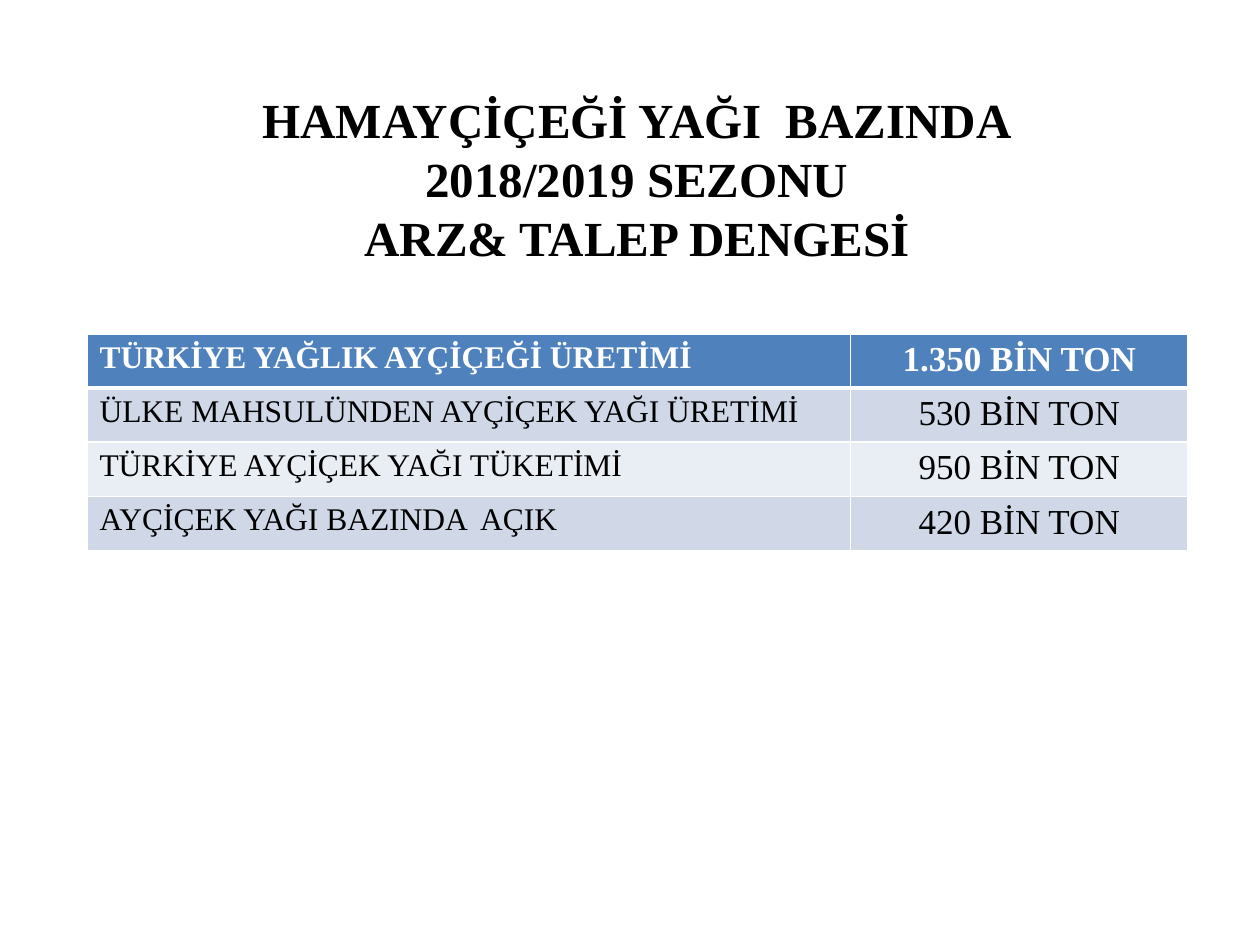
from dataclasses import dataclass

from lxml import etree
from pptx import Presentation
from pptx.dml.color import RGBColor
from pptx.enum import text
from pptx.oxml import ns
from pptx.util import Inches, Pt


@dataclass(frozen=True)
class Theme:
    font: str = "Times New Roman"
    ink: str = "000000"
    paper: str = "FFFFFF"
    header: str = "4F81BD"
    bands: tuple = ("D0D8E8", "E9EDF4")
    title_size: int = 28
    label_size: int = 18
    value_size: int = 20


theme = Theme()
title_lines = ["HAMAYÇİÇEĞİ YAĞI  BAZINDA", "2018/2019 SEZONU", "ARZ& TALEP DENGESİ"]
balance = [
    ("TÜRKİYE YAĞLIK AYÇİÇEĞİ ÜRETİMİ", "1.350 BİN TON"),
    ("ÜLKE MAHSULÜNDEN AYÇİÇEK YAĞI ÜRETİMİ", "530 BİN TON"),
    ("TÜRKİYE AYÇİÇEK YAĞI TÜKETİMİ", "950 BİN TON"),
    ("AYÇİÇEK YAĞI BAZINDA  AÇIK", "420 BİN TON"),
]


def add_span(para, wording, size, color, bold, align):
    para.alignment = align
    span = para.add_run()
    span.text = wording
    span.font.name = theme.font
    span.font.size = Pt(size)
    span.font.bold = bold
    span.font.color.rgb = RGBColor.from_string(color)


def set_borders(cell, bottom_width):
    """Draw thin borders on three sides and one of the given width below."""
    properties = cell._tc.get_or_add_tcPr()
    widths = {"lnL": 1, "lnR": 1, "lnT": 1, "lnB": bottom_width}
    for position, (side, width) in enumerate(widths.items()):
        line = etree.Element(ns.qn(f"a:{side}"), w=str(Pt(width)))
        fill = etree.SubElement(line, ns.qn("a:solidFill"))
        etree.SubElement(fill, ns.qn("a:srgbClr"), val=theme.paper)
        properties.insert(position, line)


deck = Presentation()
deck.slide_width, deck.slide_height = Inches(10), Inches(7.5)
page = deck.slides.add_slide(deck.slide_layouts[5])

title = page.shapes.title
title.left, title.top = Inches(0.68), Inches(0.66)
title.width, title.height = Inches(8.75), Inches(1.51)
frame = title.text_frame
frame.word_wrap = True
frame.auto_size = text.MSO_AUTO_SIZE.NONE
frame.vertical_anchor = text.MSO_ANCHOR.TOP
for index, wording in enumerate(title_lines):
    para = frame.paragraphs[0] if index == 0 else frame.add_paragraph()
    add_span(para, wording, theme.title_size, theme.ink, True, text.PP_ALIGN.CENTER)

column_widths = [6.06, 2.68]
row_height = 0.43
table = page.shapes.add_table(
    len(balance), len(column_widths), Inches(0.69), Inches(2.65),
    Inches(sum(column_widths)), Inches(row_height * len(balance)),
).table
for column, width in zip(table.columns, column_widths):
    column.width = Inches(width)

column_styles = [
    (theme.label_size, text.PP_ALIGN.LEFT),
    (theme.value_size, text.PP_ALIGN.CENTER),
]
for row_index, entry in enumerate(balance):
    is_header = row_index == 0
    fill_color = theme.header if is_header else theme.bands[(row_index - 1) % 2]
    ink = theme.paper if is_header else theme.ink
    table.rows[row_index].height = Inches(row_height)
    for column_index, (wording, (size, align)) in enumerate(zip(entry, column_styles)):
        cell = table.cell(row_index, column_index)
        cell.fill.solid()
        cell.fill.fore_color.rgb = RGBColor.from_string(fill_color)
        set_borders(cell, 3 if is_header else 1)
        add_span(cell.text_frame.paragraphs[0], wording, size, ink, is_header, align)

deck.save("out.pptx")
